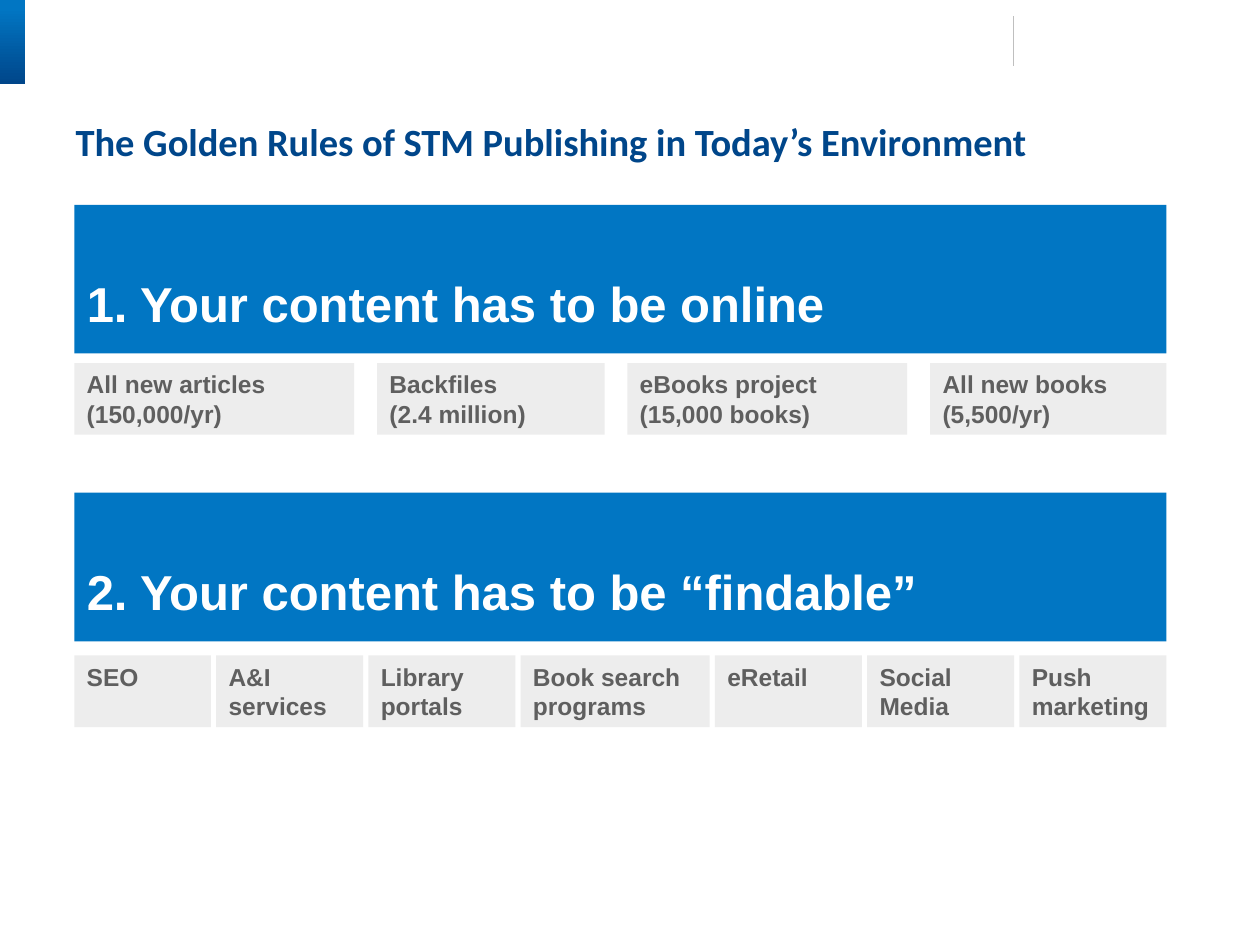
from pptx import Presentation
from pptx.dml.color import RGBColor
from pptx.enum.shapes import MSO_CONNECTOR as CONNECTOR, MSO_SHAPE as SHAPE
from pptx.enum.text import MSO_ANCHOR as ANCHOR, PP_ALIGN as ALIGN
from pptx.oxml.ns import qn
from pptx.util import Pt
from lxml import etree


def rgb(value):
    return RGBColor.from_string(value)


def add_panel(text, left, top, width, height, fill, size, color):
    panel = slide.shapes.add_shape(SHAPE.RECTANGLE, Pt(left), Pt(top), Pt(width), Pt(height))
    panel.shadow.inherit = False
    panel.fill.solid()
    panel.fill.fore_color.rgb = rgb(fill)
    panel.line.fill.background()
    frame = panel.text_frame
    frame.word_wrap = True
    frame.vertical_anchor = ANCHOR.TOP
    frame.text = text
    paragraph = frame.paragraphs[0]
    paragraph.alignment = ALIGN.LEFT
    paragraph.font.name = "Arial"
    paragraph.font.size = Pt(size)
    paragraph.font.bold = True
    paragraph.font.color.rgb = rgb(color)
    return frame


deck = Presentation()
deck.slide_width, deck.slide_height = Pt(720), Pt(540)
slide = deck.slides.add_slide(deck.slide_layouts[6])

corner = slide.shapes.add_shape(SHAPE.RECTANGLE, 0, 0, Pt(14.4), Pt(48))
corner.shadow.inherit = False
corner.line.fill.background()
corner.fill.gradient()
corner.fill.gradient_angle = 270
for stop, position, color in zip(corner.fill.gradient_stops, (0.1, 1), ("0176C3", "00468A")):
    stop.position = position
    stop.color.rgb = rgb(color)

divider = slide.shapes.add_connector(CONNECTOR.STRAIGHT, Pt(579), Pt(9.4), Pt(579), Pt(37.6))
divider.line.color.rgb = rgb("BFBFBF")
divider.line.width = Pt(0.75)
etree.SubElement(divider._element.spPr, qn("a:effectLst"))

title = slide.shapes.add_textbox(Pt(43.2), Pt(70.5), Pt(641), Pt(24.5)).text_frame
title.margin_left = title.margin_top = title.margin_right = title.margin_bottom = 0
title.word_wrap = True
title.text = "The Golden Rules of STM Publishing in Today’s Environment"
heading = title.paragraphs[0]
heading.line_spacing = 0.9
heading.font.name = "Calibri"
heading.font.size = Pt(22)
heading.font.bold = True
heading.font.color.rgb = rgb("00468A")

margin = 42.5
rules = [
    ("1. Your content has to be online", 117, 207.5, 13, [
        ("All new articles (150,000/yr)", 160),
        ("Backfiles\v(2.4 million)", 130),
        ("eBooks project (15,000 books)", 160),
        ("All new books (5,500/yr)", 135),
    ]),
    ("2. Your content has to be “findable”", 281.5, 374.5, 3, [
        ("SEO", 78),
        ("A&I services", 84),
        ("Library portals", 84),
        ("Book search programs", 108),
        ("eRetail", 84),
        ("Social Media", 84),
        ("Push marketing", 84),
    ]),
]
for rule, banner_top, example_top, gap, examples in rules:
    banner = add_panel(rule, margin, banner_top, 624, 85, "0176C3", 28, "FFFFFF")
    banner.vertical_anchor = ANCHOR.BOTTOM
    banner.margin_bottom = Pt(12)
    left = margin
    for example, width in examples:
        add_panel(example, left, example_top, width, 41, "EDEDED", 14, "5F5F5F")
        left += width + gap

deck.save("out.pptx")
